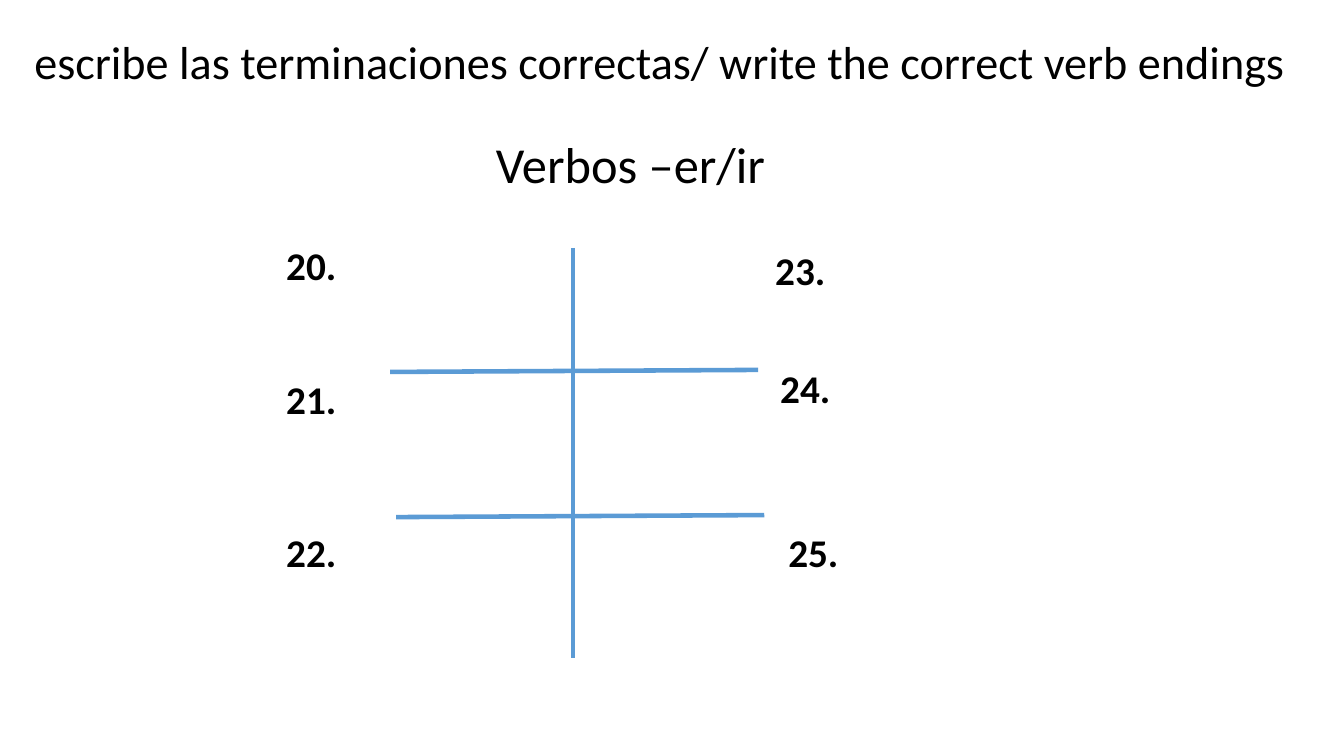
from pptx import Presentation
from pptx import util as u
from pptx.dml import color
from pptx.enum import shapes, text
from lxml import etree

DRAWING = "http://schemas.openxmlformats.org/drawingml/2006/main"


def rgb(code):
    return color.RGBColor.from_string(code)


def write(box, words, size, bold=False, wrap=True):
    frame = box.text_frame
    frame.word_wrap = wrap
    frame.auto_size = text.MSO_AUTO_SIZE.SHAPE_TO_FIT_TEXT
    frame.vertical_anchor = text.MSO_ANCHOR.TOP
    para = frame.paragraphs[0]
    para.alignment = text.PP_ALIGN.LEFT
    span = para.add_run()
    span.text = words
    span.font.name = "Calibri"
    span.font.size = u.Pt(size)
    span.font.bold = bold
    span.font.color.rgb = rgb("000000")


deck = Presentation()
deck.slide_width = u.Inches(13.33)
deck.slide_height = u.Inches(7.5)
page = deck.slides.add_slide(deck.slide_layouts[5])

grid_lines = [
    (5.68, 2.46, 5.68, 6.53, 3),
    (3.87, 3.69, 7.52, 3.67, 3.25),
    (3.93, 5.13, 7.58, 5.11, 3.25),
]
for *ends, width in grid_lines:
    line = page.shapes.add_connector(
        shapes.MSO_CONNECTOR.STRAIGHT, *[u.Inches(end) for end in ends])
    line.line.color.rgb = rgb("5B9BD5")
    line.line.width = u.Pt(width)
    etree.SubElement(line._element.spPr, f"{{{DRAWING}}}effectLst")

heading = page.shapes.add_textbox(
    u.Inches(4.82), u.Inches(1.27), u.Inches(3.01), u.Inches(0.71))
write(heading, "Verbos –er/ir", 36, wrap=False)

title = page.shapes.title
title.left, title.top = u.Inches(0.24), u.Inches(0.28)
title.width, title.height = u.Inches(13.2), u.Inches(0.66)
write(title, "escribe las terminaciones correctas/ write the correct verb endings", 33)

number_places = [(2.74, 2.34), (2.74, 3.67), (2.74, 5.19),
                 (7.59, 2.39), (7.64, 3.57), (7.72, 5.19)]
for number, (left, top) in enumerate(number_places, start=20):
    box = page.shapes.add_textbox(
        u.Inches(left), u.Inches(top), u.Inches(0.71), u.Inches(0.57))
    write(box, f"{number}.", 28, bold=True)

deck.save("out.pptx")
